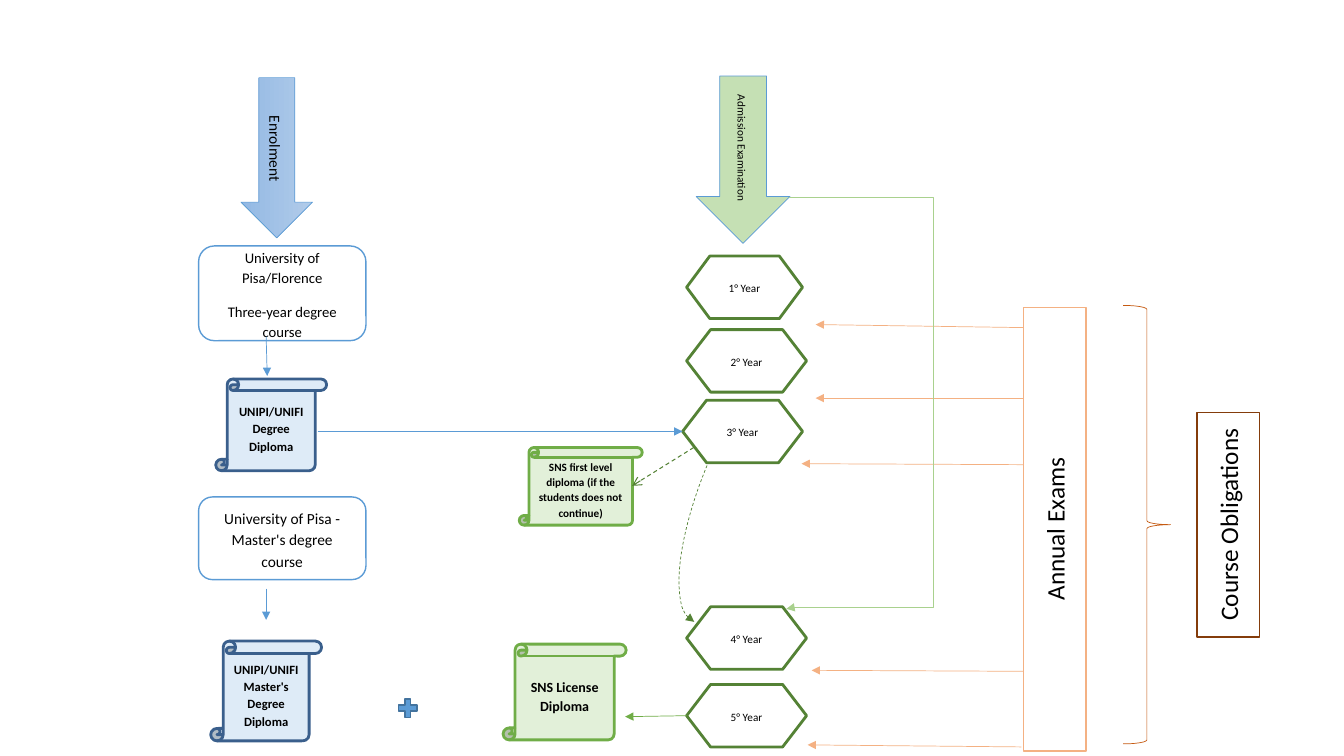
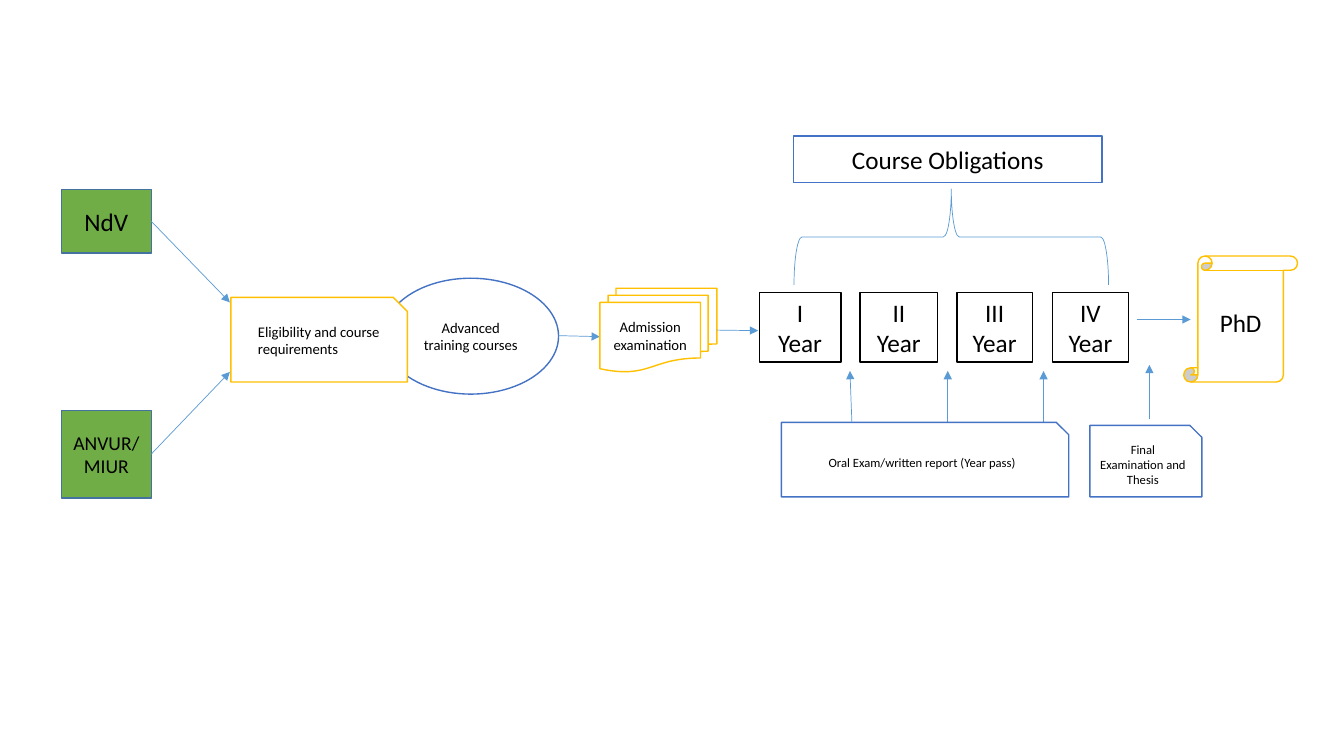
from dataclasses import dataclass

from lxml import etree
from pptx import Presentation
from pptx.dml.color import RGBColor
from pptx.enum.dml import MSO_LINE
from pptx.enum.shapes import MSO_CONNECTOR, MSO_SHAPE
from pptx.enum.text import MSO_ANCHOR, MSO_AUTO_SIZE, PP_ALIGN
from pptx.oxml.ns import qn
from pptx.util import Inches, Pt

STRAIGHT, ELBOW = MSO_CONNECTOR.STRAIGHT, MSO_CONNECTOR.ELBOW
RECT, ROUNDED = MSO_SHAPE.RECTANGLE, MSO_SHAPE.ROUNDED_RECTANGLE
SNIPPED, ELLIPSE = MSO_SHAPE.SNIP_1_RECTANGLE, MSO_SHAPE.OVAL
SCROLL, BLOCK_ARROW = MSO_SHAPE.VERTICAL_SCROLL, MSO_SHAPE.RIGHT_ARROW
HEXAGON = MSO_SHAPE.FLOWCHART_PREPARATION
DOCUMENTS = MSO_SHAPE.FLOWCHART_MULTIDOCUMENT
BRACE, ARC, PLUS = MSO_SHAPE.RIGHT_BRACE, MSO_SHAPE.ARC, MSO_SHAPE.MATH_PLUS
CENTER, LEFT = PP_ALIGN.CENTER, PP_ALIGN.LEFT
MIDDLE, TOP = MSO_ANCHOR.MIDDLE, MSO_ANCHOR.TOP
SIDE_LEFT, SIDE_RIGHT = 1, 3
BLANK_LAYOUT = 6


@dataclass(frozen=True)
class Theme:
    font: str = "Calibri"
    # Colours
    ink: str = "000000"
    paper: str = "FFFFFF"
    blue: str = "5B9BD5"
    blue_edge: str = "43739E"
    royal: str = "4472C4"
    navy: str = "3A5F8C"
    ice: str = "DEEBF7"
    enrol_start: str = "B1CBE9"
    enrol_end: str = "93B9E4"
    green: str = "70AD47"
    green_dark: str = "548235"
    green_mid: str = "A9D18E"
    green_soft: str = "C5E0B4"
    green_pale: str = "E2F0D9"
    peach: str = "F4B183"
    rust: str = "C55A11"
    brown: str = "843C0B"
    gold: str = "FFC000"
    # Type sizes
    heading: float = 18
    agency: float = 14
    course: float = 11
    body: float = 10.5
    award: float = 10
    small: float = 9
    tiny: float = 8
    # Line widths
    thin: float = 0.5
    dashed: float = 0.75
    outline: float = 1
    heavy: float = 2


THEME = Theme()


def rgb(value):
    return RGBColor.from_string(value)


def write(shape, text, size=THEME.body, bold=False, align=CENTER, anchor=MIDDLE,
          spaced=False, upward=False):
    """Fill a shape with text; each line of the text is a paragraph."""
    frame = shape.text_frame
    frame.word_wrap = True
    frame.vertical_anchor = anchor
    if upward:
        shape.element.txBody.bodyPr.set("vert", "vert270")
    for index, words in enumerate(text.split("\n")):
        paragraph = frame.add_paragraph() if index else frame.paragraphs[0]
        paragraph.alignment = align
        if spaced:
            paragraph.line_spacing = 1.15
            paragraph.space_after = Pt(10)
        run = paragraph.add_run()
        run.text = words
        run.font.name = THEME.font
        run.font.size = Pt(size)
        run.font.bold = bold
        run.font.color.rgb = rgb(THEME.ink)


def style_line(item, color, width, dash=False, head=None, tail=None):
    item.line.color.rgb = rgb(color)
    item.line.width = Pt(width)
    if dash:
        item.line.dash_style = MSO_LINE.DASH
    for end, kind in (("a:headEnd", head), ("a:tailEnd", tail)):
        if kind:
            outline = item.element.spPr.get_or_add_ln()
            etree.SubElement(outline, qn(end)).set("type", kind)


@dataclass(frozen=True)
class Region:
    """Part of a slide; everything in it is placed from its top left corner."""
    slide: object
    left: float
    top: float

    def point(self, x, y):
        return Inches(self.left + x), Inches(self.top + y)

    def shape(self, kind, box, line, fill=THEME.paper, width=THEME.outline,
              text="", rotation=0, dash=False, head=None, **text_format):
        x, y, w, h = box
        shape = self.slide.shapes.add_shape(
            kind, *self.point(x, y), Inches(w), Inches(h))
        shape.shadow.inherit = False
        shape.rotation = rotation
        if fill:
            shape.fill.solid()
            shape.fill.fore_color.rgb = rgb(fill)
        else:
            shape.fill.background()
        style_line(shape, line, width, dash, head)
        if text:
            write(shape, text, **text_format)
        return shape

    def arrow(self, start, end, color=THEME.blue, width=THEME.thin, dash=False,
              tail="triangle", source=None, target=None, kind=STRAIGHT):
        """Draw an arrow; source and target are (shape, side) to join."""
        connector = self.slide.shapes.add_connector(
            kind, *self.point(*start), *self.point(*end))
        if source:
            connector.begin_connect(*source)
        if target:
            connector.end_connect(*target)
        style_line(connector, color, width, dash, tail=tail)
        etree.SubElement(connector.element.spPr, qn("a:effectLst"))
        return connector


def university_track(region):
    """Enrolment and the two university degrees; returns the track's arrow start."""
    enrolment = region.shape(BLOCK_ARROW, (0, 0.46, 1.59, 0.71), THEME.blue,
                             width=THEME.thin, rotation=90, text="Enrolment",
                             size=THEME.course, spaced=True)
    enrolment.fill.gradient()
    enrolment.fill.gradient_angle = 270
    for stop, color in zip(enrolment.fill.gradient_stops,
                           (THEME.enrol_start, THEME.enrol_end)):
        stop.color.rgb = rgb(color)

    # Courses
    for y, height, size, course in (
            (1.69, 0.94, THEME.body,
             "University of Pisa/Florence\nThree-year degree course"),
            (4.18, 0.82, THEME.course,
             "University of Pisa - Master's degree course")):
        region.shape(ROUNDED, (0.02, y, 1.66, height), THEME.blue,
                     text=course, size=size, spaced=True)

    # Diplomas
    for x, y, height, diploma in (
            (0.19, 3.01, 0.91, "UNIPI/UNIFI Degree Diploma"),
            (0.14, 5.61, 0.99, "UNIPI/UNIFI Master's Degree Diploma")):
        region.shape(SCROLL, (x, y, 1.1, height), THEME.navy, THEME.ice,
                     THEME.heavy, diploma, size=THEME.small, bold=True,
                     spaced=True)
    region.arrow((0.69, 2.59), (0.7, 2.98))
    region.arrow((0.69, 5.09), (0.69, 5.4))
    region.shape(PLUS, (1.97, 6.15, 0.25, 0.25), THEME.blue_edge, THEME.blue)


def sns_track(region):
    """Admission, five years and the SNS diplomas; returns the years."""
    region.shape(BLOCK_ARROW, (1.54, 0.37, 1.66, 0.93), THEME.blue,
                 THEME.green_soft, THEME.thin, "Admission Examination",
                 rotation=90, size=THEME.tiny, spaced=True)
    years = [
        region.shape(HEXAGON, (x, y, w, 0.62), THEME.green_dark,
                     width=THEME.heavy, text=f"{number}° Year",
                     size=THEME.tiny, spaced=True)
        for number, (x, y, w) in enumerate(
            ((1.81, 1.79, 1.15), (1.81, 2.52, 1.19), (1.77, 3.22, 1.19),
             (1.81, 5.27, 1.19), (1.81, 6.04, 1.19)), start=1)]

    # Diplomas
    for x, y, height, size, diploma in (
            (0.15, 3.69, 0.77, THEME.tiny,
             "SNS first level diploma (if the students does not continue)"),
            (-0.01, 5.64, 0.95, THEME.award, "SNS License Diploma")):
        region.shape(SCROLL, (x, y, 1.22, height), THEME.green,
                     THEME.green_pale, THEME.heavy, diploma, size=size,
                     bold=True, spaced=True)
    region.arrow((1.88, 3.69), (1.27, 4.07), THEME.green_dark, THEME.dashed,
                 dash=True, tail="arrow")
    region.arrow((1.81, 6.35), (1.2, 6.36), THEME.green,
                 source=(years[4], SIDE_LEFT))

    # Passage from the third to the fourth year
    passage = region.shape(ARC, (1.99, 2.5, 0.98, 3.04), THEME.green_dark,
                           None, THEME.thin, rotation=203, dash=True,
                           head="triangle")
    passage.adjustments[0] = 162
    passage.adjustments[1] = 213.67

    # Direct admission to the fourth year
    direct = region.arrow((2.83, 1.21), (2.8, 5.29), THEME.green_mid, kind=ELBOW)
    geometry = direct.element.spPr.find(qn("a:prstGeom"))
    geometry.set("prst", "bentConnector4")
    guides = geometry.find(qn("a:avLst"))
    if guides is None:
        guides = etree.SubElement(geometry, qn("a:avLst"))
    for name, value in (("adj1", -4767000), ("adj2", 99700)):
        guide = etree.SubElement(guides, qn("a:gd"))
        guide.set("name", name)
        guide.set("fmla", f"val {value}")
    return years


def exam_obligations(region):
    """Annual exams, their arrows to the years, and the course obligations."""
    region.shape(RECT, (0, 0.02, 0.62, 4.4), THEME.peach, text="Annual Exams",
                 size=THEME.heading, upward=True)
    for start, end in (((0, 0.22), (-2.06, 0.19)), ((0, 0.92), (-2.06, 0.92)),
                       ((0, 1.58), (-2.2, 1.57)), ((0, 3.63), (-2.1, 3.62)),
                       ((-0.02, 4.38), (-2.14, 4.36))):
        region.arrow(start, end, THEME.peach)
    region.shape(BRACE, (0.99, 0, 0.47, 4.35), THEME.rust, None, THEME.thin)
    region.shape(RECT, (1.72, 1.06, 0.62, 2.23), THEME.brown,
                 text="Course Obligations", size=THEME.heading, upward=True)


def training_and_admission(region):
    """Advanced training courses followed by the admission examination."""
    region.shape(ELLIPSE, (0, 0, 1.74, 1.15), THEME.royal,
                 text="Advanced training courses")
    region.arrow((1.74, 0.57), (2.15, 0.58))
    admission = region.shape(DOCUMENTS, (2.15, 0.1, 1.16, 0.83), THEME.gold,
                             text="Admission examination")
    region.arrow((3.31, 0.52), (3.72, 0.52), source=(admission, SIDE_RIGHT))


def accreditation(region):
    """The two agencies and the requirements they feed."""
    for y, height, size, agency, tip in (
            (0, 0.63, THEME.heading, "NdV", 1.12),
            (2.19, 0.87, THEME.agency, "ANVUR/MIUR", 1.81)):
        source = region.shape(RECT, (0, y, 0.89, height), THEME.blue_edge,
                              THEME.green, text=agency, size=size)
        region.arrow((0.89, y + height / 2), (1.67, tip),
                     source=(source, SIDE_RIGHT))
    region.shape(SNIPPED, (1.68, 1.07, 1.75, 0.84), THEME.gold)
    requirements = region.slide.shapes.add_textbox(
        *region.point(1.85, 1.27), Inches(1.59), Inches(0.45))
    write(requirements, "Eligibility and course requirements", align=LEFT,
          anchor=TOP)
    requirements.text_frame.auto_size = MSO_AUTO_SIZE.SHAPE_TO_FIT_TEXT


def doctoral_years(region):
    """Four years between the course obligations and the yearly exam."""
    for x, width, year in ((0, 0.81, "I\nYear"), (1, 0.77, "II Year"),
                           (1.96, 0.75, "III Year"), (2.91, 0.75, "IV Year")):
        region.shape(RECT, (x, 1.55, width, 0.69), THEME.ink, text=year,
                     size=THEME.heading)
    region.shape(BRACE, (1.43, -0.56, 0.95, 3.12), THEME.blue, None, THEME.thin,
                 rotation=270)
    region.shape(RECT, (0.34, 0, 3.06, 0.46), THEME.royal,
                 text="Course Obligations", size=THEME.heading)
    for foot, tip in ((0.92, 0.9), (1.87, 1.87), (2.82, 2.82)):
        region.arrow((foot, 2.86), (tip, 2.33))
    region.shape(SNIPPED, (0.22, 2.84, 2.85, 0.74), THEME.royal,
                 text="Oral Exam/written report (Year pass)", size=THEME.small)


def doctorate(region):
    """Final examination and the resulting title."""
    region.arrow((0.59, 1.62), (0.59, 1.08))
    region.shape(SNIPPED, (0, 1.68, 1.11, 0.71), THEME.royal,
                 text="Final Examination and Thesis", size=THEME.small)
    region.shape(SCROLL, (0.93, 0, 1.13, 1.25), THEME.gold, text="PhD",
                 size=THEME.heading)
    region.arrow((0.47, 0.63), (1, 0.63))


def degree_slide(slide):
    university = Region(slide, 1.95, 0.75)
    university_track(university)
    exam_obligations(Region(slide, 10.15, 3.03))
    years = sns_track(Region(slide, 5, 0.75))
    # First degree leads into the third year
    university.arrow((1.2, 3.53), (4.82, 3.53), target=(years[2], SIDE_LEFT))


def doctoral_slide(slide):
    training_and_admission(Region(slide, 3.8, 2.76))
    accreditation(Region(slide, 0.61, 1.88))
    doctoral_years(Region(slide, 7.53, 1.35))
    doctorate(Region(slide, 10.81, 2.54))


def main():
    deck = Presentation()
    deck.slide_width, deck.slide_height = Inches(13.33), Inches(7.5)
    for build in (degree_slide, doctoral_slide):
        build(deck.slides.add_slide(deck.slide_layouts[BLANK_LAYOUT]))
    deck.save("out.pptx")


if __name__ == "__main__":
    main()
